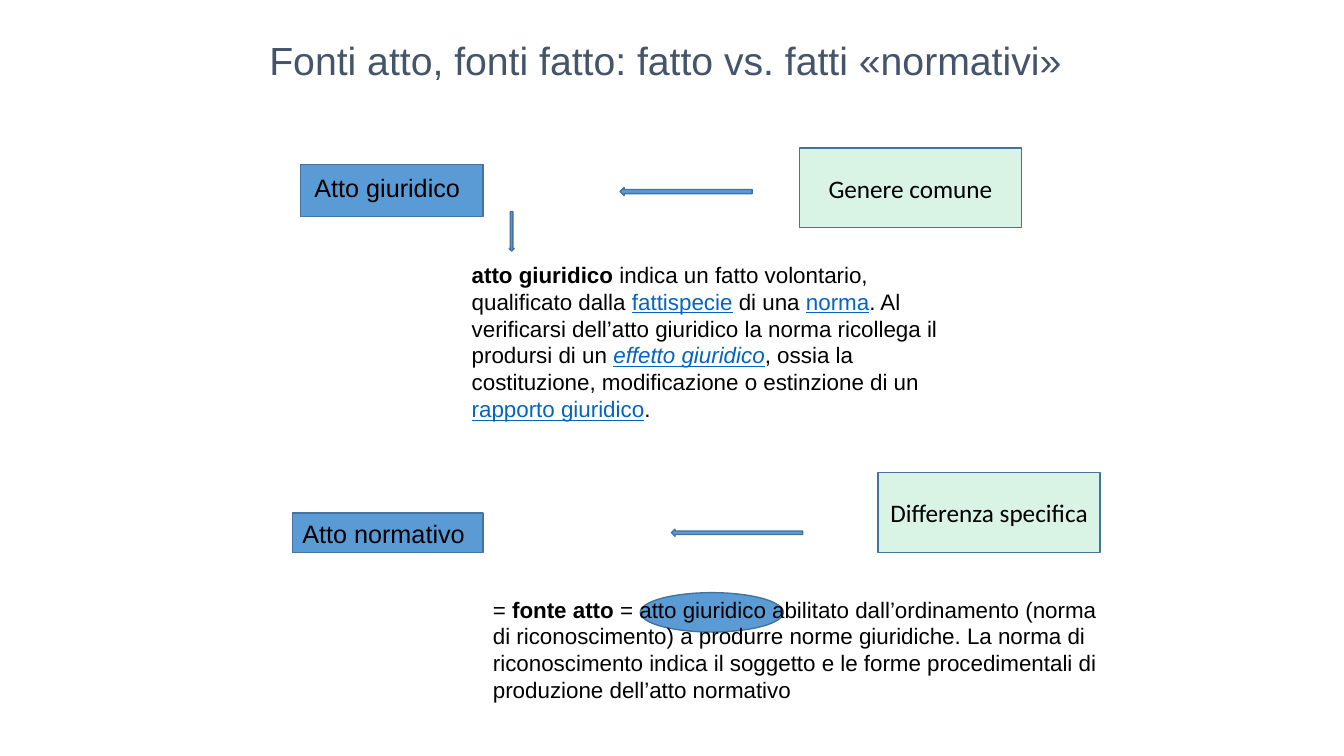
from lxml import etree
from pptx import Presentation
from pptx.dml.color import RGBColor
from pptx.enum.shapes import MSO_SHAPE as Preset
from pptx.enum.text import MSO_ANCHOR as Anchor, PP_ALIGN as Align
from pptx.oxml.ns import qn
from pptx.util import Inches, Pt

COLORS = {
    "blue": "5B9BD5",
    "outline": "43739E",
    "green": "00B050",
    "title": "44546A",
    "link": "0563C1",
    "text": "000000",
}

presentation = Presentation()
presentation.slide_width = Inches(13.33)
presentation.slide_height = Inches(7.5)
slide = presentation.slides.add_slide(presentation.slide_layouts[6])


def add_figure(preset, position, fill="blue"):
    shape = slide.shapes.add_shape(preset, *map(Inches, position))
    shape.shadow.inherit = False
    shape.fill.solid()
    shape.fill.fore_color.rgb = RGBColor.from_string(COLORS[fill])
    shape.line.color.rgb = RGBColor.from_string(COLORS["outline"])
    shape.line.width = Pt(1)
    return shape


def write(shape, runs, size, font="Arial", color="text", align=Align.LEFT):
    """Each run is a text followed by a style: letters from b, i and l (link)."""
    shape.text_frame.word_wrap = True
    paragraph = shape.text_frame.paragraphs[0]
    paragraph.alignment = align
    paragraph.font.size = Pt(size)
    paragraph.font.name = font
    paragraph.font.color.rgb = RGBColor.from_string(COLORS[color])
    for text, style in runs:
        run = paragraph.add_run()
        run.text = text
        if "b" in style:
            run.font.bold = True
        if "i" in style:
            run.font.italic = True
        if "l" in style:
            run.font.underline = True
            run.font.color.rgb = RGBColor.from_string(COLORS["link"])


# Blue boxes behind the labels, and the ellipse behind the definition
add_figure(Preset.RECTANGLE, (2.9, 5.09, 1.89, 0.39))
add_figure(Preset.RECTANGLE, (2.98, 1.63, 1.81, 0.52))
add_figure(Preset.OVAL, (6.35, 5.88, 1.42, 0.39))

# Title
title = slide.shapes.add_textbox(Inches(2.1), Inches(0.28), Inches(9), Inches(0.63))
title.text_frame.vertical_anchor = Anchor.MIDDLE
write(title, [("Fonti atto, fonti fatto: fatto vs. fatti «normativi»", "")],
      28, color="title", align=Align.CENTER)

# Pale green boxes
for label, left, top in [("Genere comune", 7.93, 1.47),
                         ("Differenza specifica", 8.71, 4.69)]:
    box = add_figure(Preset.RECTANGLE, (left, top, 2.2, 0.79), "green")
    fill_color = box.fill._xPr.find(qn("a:solidFill"))[0]
    etree.SubElement(fill_color, qn("a:alpha"), val="15000")
    box.text_frame.vertical_anchor = Anchor.MIDDLE
    write(box, [(label, "")], 18, font="Calibri", align=Align.CENTER)

# Arrows
for position in [(6.15, 1.86, 1.31, 0.08), (6.66, 5.25, 1.3, 0.07)]:
    add_figure(Preset.RIGHT_ARROW, position).rotation = 180
add_figure(Preset.DOWN_ARROW, (5.05, 2.1, 0.05, 0.39))

# Labels and definitions
legal_act = [
    ("atto giuridico", "b"),
    (" indica un fatto volontario, qualificato dalla ", ""),
    ("fattispecie", "l"),
    (" di una ", ""),
    ("norma", "l"),
    (". Al verificarsi dell’atto giuridico la norma ricollega il prodursi di un ", ""),
    ("effetto giuridico", "il"),
    (", ossia la costituzione, modificazione o estinzione di un ", ""),
    ("rapporto giuridico", "l"),
    (".", ""),
]
normative_act = [
    ("= ", ""),
    ("fonte atto ", "b"),
    ("= atto giuridico abilitato dall’ordinamento (norma di riconoscimento) "
     "a produrre norme giuridiche. La norma di riconoscimento indica il soggetto "
     "e le forme procedimentali di produzione dell’atto normativo", ""),
]
for runs, size, position in [
    ([("Atto giuridico", "")], 18, (3.02, 1.66, 3.07, 0.4)),
    ([("Atto normativo", "")], 18, (2.9, 5.09, 3.78, 0.4)),
    (legal_act, 16, (4.58, 2.54, 5.18, 1.72)),
    (normative_act, 16, (4.79, 5.86, 6.22, 1.18)),
]:
    write(slide.shapes.add_textbox(*map(Inches, position)), runs, size)

presentation.save("out.pptx")
